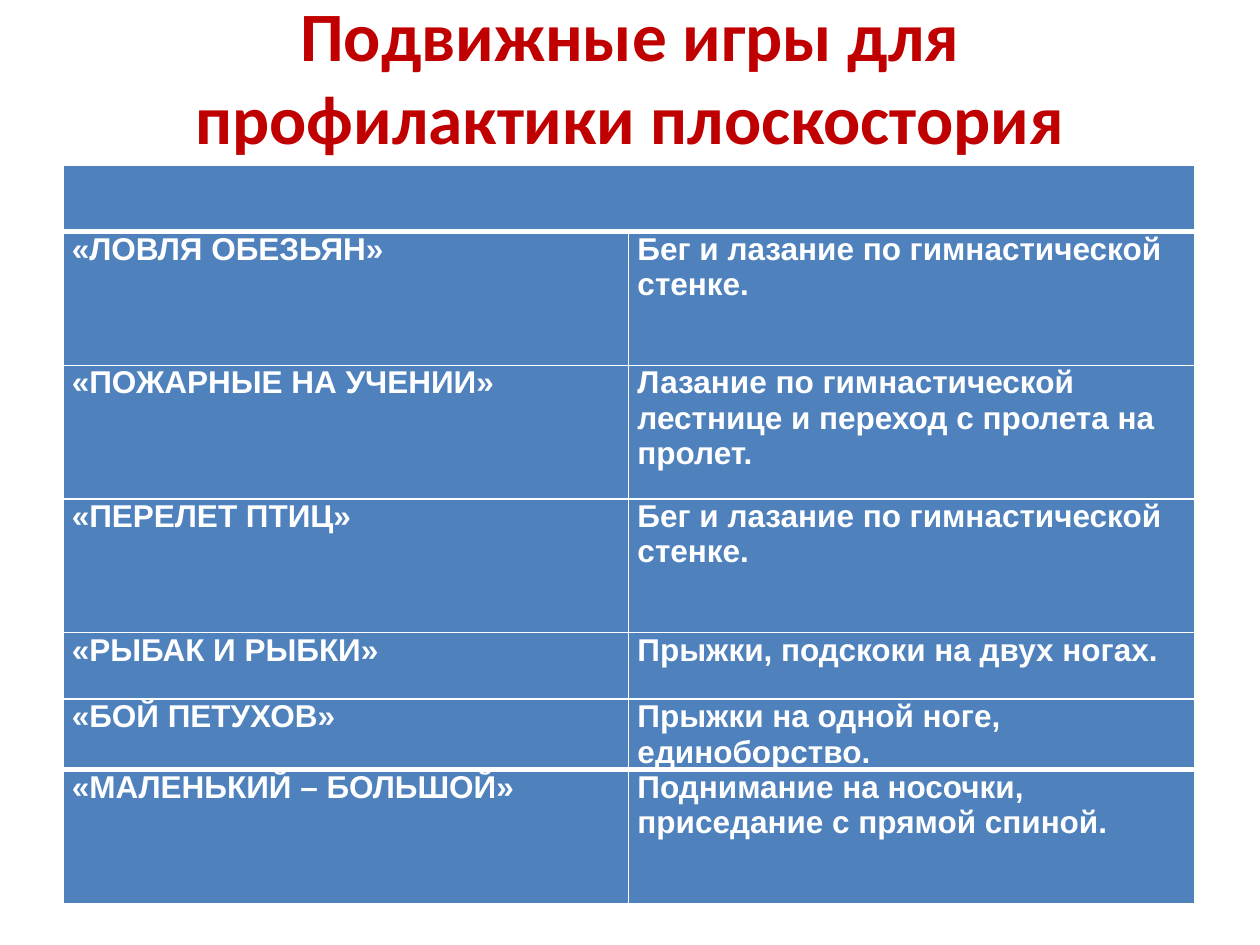
import pptx
import pptx.util
import pptx.dml.color
import pptx.enum.text
from lxml import etree
from pptx.oxml.ns import qn

RED = pptx.dml.color.RGBColor(0xC0, 0x00, 0x00)
BLUE = pptx.dml.color.RGBColor(0x4F, 0x81, 0xBD)
WHITE = pptx.dml.color.RGBColor(0xFF, 0xFF, 0xFF)
Inches, Pt = pptx.util.Inches, pptx.util.Pt

GAMES = [
    ("«ЛОВЛЯ ОБЕЗЬЯН»", "Бег и лазание по гимнастической стенке."),
    ("«ПОЖАРНЫЕ НА УЧЕНИИ»",
     "Лазание по гимнастической лестнице и переход с пролета на пролет."),
    ("«ПЕРЕЛЕТ ПТИЦ»", "Бег и лазание по гимнастической стенке."),
    ("«РЫБАК И РЫБКИ»", "Прыжки, подскоки на двух ногах."),
    ("«БОЙ ПЕТУХОВ»", "Прыжки на одной ноге, единоборство."),
    ("«МАЛЕНЬКИЙ – БОЛЬШОЙ»", "Поднимание на носочки, приседание с прямой спиной."),
]
ROW_UNIT = Inches(0.53)
ROW_UNITS = [1, 2, 2, 2, 1, 1, 2]


def set_borders(cell, top, bottom):
    """Draw white borders, one point wide at the sides; call before the fill."""
    properties = cell._tc.get_or_add_tcPr()
    for side, width in (("L", 1), ("R", 1), ("T", top), ("B", bottom)):
        line = etree.SubElement(properties, qn(f"a:ln{side}"), w=str(Pt(width)))
        fill = etree.SubElement(line, qn("a:solidFill"))
        etree.SubElement(fill, qn("a:srgbClr"), val=str(WHITE))


deck = pptx.Presentation()
deck.slide_width, deck.slide_height = Inches(10), Inches(7.5)
slide = deck.slides.add_slide(deck.slide_layouts[5])

# Title, with a closing line break that lifts it above the table
heading = slide.shapes.title
heading.left, heading.top = Inches(0.5), Inches(0.3)
heading.width, heading.height = Inches(9), Inches(1.25)
heading.text_frame.text = "Подвижные игры для профилактики плоскостория\v"
heading.text_frame.vertical_anchor = pptx.enum.text.MSO_ANCHOR.MIDDLE
heading_line = heading.text_frame.paragraphs[0]
heading_line.alignment = pptx.enum.text.PP_ALIGN.CENTER
heading_line.font.name = "Calibri"
heading_line.font.size = Pt(39.6)
heading_line.font.bold = True
heading_line.font.color.rgb = RED

# Table of games and their movements
games = slide.shapes.add_table(
    len(ROW_UNITS), 2, Inches(0.5), Inches(1.31), Inches(8.98),
    ROW_UNIT * sum(ROW_UNITS)).table
for row, units in zip(games.rows, ROW_UNITS):
    row.height = ROW_UNIT * units

last = len(GAMES)
for row_number, texts in enumerate([("", "")] + GAMES):
    for column, text in enumerate(texts):
        cell = games.cell(row_number, column)
        # Thick rules under the heading row and above the last row
        set_borders(cell, 3 if row_number in (1, last) else 1,
                    3 if row_number in (0, last - 1) else 1)
        cell.fill.solid()
        cell.fill.fore_color.rgb = BLUE
        if not text:
            continue
        cell.margin_left = cell.margin_right = Inches(0.07)
        cell.margin_top = cell.margin_bottom = 0
        cell.text = text
        font = cell.text_frame.paragraphs[0].font
        font.name, font.size, font.bold = "Arial", Pt(18), True
        font.color.rgb = WHITE
games.cell(0, 0).merge(games.cell(0, 1))

deck.save("out.pptx")
